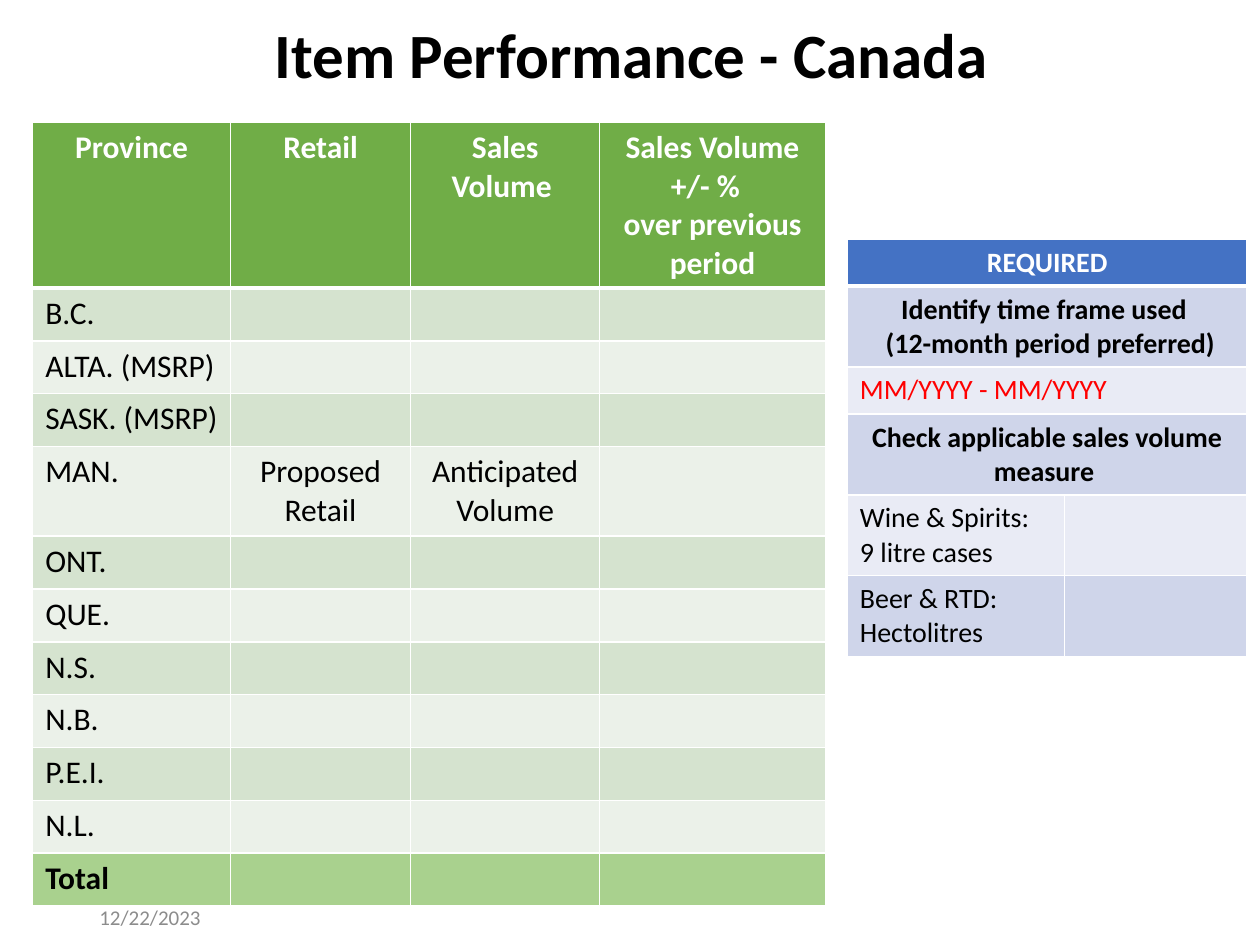
"""Build the Item Performance - Canada slide with its two tables."""
from lxml import etree
from pptx import Presentation
from pptx.dml.color import RGBColor
from pptx.enum.text import MSO_ANCHOR, PP_ALIGN
from pptx.oxml.ns import qn
from pptx.util import Pt

CENTER, LEFT = PP_ALIGN.CENTER, PP_ALIGN.LEFT
MIDDLE = MSO_ANCHOR.MIDDLE
TITLE_ONLY = 5
FONT = "Calibri"
COLORS = {
    "black": "000000", "white": "FFFFFF", "gray": "8C8C8C", "red": "FF0000",
    "green": "70AD47", "green_dark": "D5E3CF", "green_light": "EBF1E9",
    "green_total": "A9D18E",
    "blue": "4472C4", "blue_dark": "CFD5EA", "blue_light": "E9EBF5",
}
PROVINCES = ["B.C.", "ALTA. (MSRP)", "SASK. (MSRP)", "MAN.", "ONT.", "QUE.",
             "N.S.", "N.B.", "P.E.I.", "N.L."]
HEADERS = [["Province"], ["Retail"], ["Sales Volume "],
           ["Sales Volume", "+/- %  ", "over previous period"]]


def write(tf, lines, size, color="black", bold=False, align=LEFT):
    """Write one paragraph per line."""
    for i, line in enumerate(lines):
        p = tf.paragraphs[0] if i == 0 else tf.add_paragraph()
        p.alignment = align
        r = p.add_run()
        r.text = line
        r.font.name = FONT
        r.font.size = Pt(size)
        r.font.bold = bold
        r.font.color.rgb = RGBColor.from_string(COLORS[color])


def place(sp, left, top, width, height):
    """Set position and size in points."""
    sp.left, sp.top, sp.width, sp.height = map(Pt, (left, top, width, height))


def style_cell(cell, fill, bottom=1, top=1):
    """Give a cell white borders and a solid fill."""
    tc_pr = cell._tc.get_or_add_tcPr()
    for side, width in (("L", 1), ("R", 1), ("T", top), ("B", bottom)):
        ln = etree.SubElement(tc_pr, qn(f"a:ln{side}"), w=str(Pt(width)))
        solid = etree.SubElement(ln, qn("a:solidFill"))
        etree.SubElement(solid, qn("a:srgbClr"), val=COLORS["white"])
    cell.fill.solid()
    cell.fill.fore_color.rgb = RGBColor.from_string(COLORS[fill])


def add_table(slide, left, top, widths, heights, fills):
    """Add a table with one fill per row and a thick rule under the header."""
    frame = slide.shapes.add_table(len(heights), len(widths), Pt(left), Pt(top),
                                   Pt(sum(widths)), Pt(sum(heights)))
    table = frame.table
    for col, width in zip(table.columns, widths):
        col.width = Pt(width)
    for i, (row, height, fill) in enumerate(zip(table.rows, heights, fills)):
        row.height = Pt(height)
        for cell in row.cells:
            style_cell(cell, fill, bottom=3 if i == 0 else 1,
                       top=3 if i == 1 else 1)
    return table


def add_title(slide, text):
    """Move and format the title placeholder."""
    sp = slide.shapes.title
    place(sp, 36.7, 9.4, 648, 48)
    tf = sp.text_frame
    tf.vertical_anchor = MIDDLE
    write(tf, [text], 36, bold=True, align=CENTER)
    tf.paragraphs[0].line_spacing = 0.9


def add_date(slide, text):
    """Add the date at the foot of the slide."""
    sp = slide.shapes.add_textbox(Pt(49.7), Pt(518.4), Pt(162), Pt(10.8))
    tf = sp.text_frame
    tf.word_wrap = True
    tf.vertical_anchor = MIDDLE
    write(tf, [text], 12, "gray")


def add_sales_table(slide):
    """Add the table of sales by province."""
    heights = [94.5] + [51.2 if name == "MAN." else 30.2 for name in PROVINCES] + [30.2]
    bands = ["green_dark", "green_light"] * (len(PROVINCES) // 2)
    table = add_table(slide, 18.7, 70.1, [113, 103, 108, 129], heights,
                      ["green"] + bands + ["green_total"])
    for col, lines in enumerate(HEADERS):
        write(table.cell(0, col).text_frame, lines, 18, "white", True, CENTER)
    for row, name in enumerate(PROVINCES, 1):
        write(table.cell(row, 0).text_frame, [name], 18)
    manitoba = PROVINCES.index("MAN.") + 1
    for col, text in enumerate(["Proposed Retail", "Anticipated Volume"], 1):
        write(table.cell(manitoba, col).text_frame, [text], 18, align=CENTER)
    write(table.cell(len(PROVINCES) + 1, 0).text_frame, ["Total "], 18, bold=True)


def add_required_table(slide):
    """Add the table of required details."""
    rows = [
        (["REQUIRED"], "white", True, CENTER),
        (["Identify time frame used ", " (12-month period preferred)"],
         "black", True, CENTER),
        (["MM/YYYY - MM/YYYY"], "red", False, LEFT),
        (["Check applicable sales volume measure "], "black", True, CENTER),
        (["Wine & Spirits: ", "9 litre cases"], "black", False, LEFT),
        (["Beer & RTD: Hectolitres"], "black", False, LEFT),
    ]
    table = add_table(slide, 484.2, 136.8, [124, 104.4],
                      [26.7, 46.2, 27, 46.2, 46.2, 46.2],
                      ["blue"] + ["blue_dark", "blue_light"] * 2 + ["blue_dark"])
    for i, (lines, color, bold, align) in enumerate(rows):
        if i < 4:
            table.cell(i, 0).merge(table.cell(i, 1))
        write(table.cell(i, 0).text_frame, lines, 16, color, bold, align)


def main():
    """Build and save the slide."""
    prs = Presentation()
    prs.slide_width, prs.slide_height = Pt(720), Pt(540)
    slide = prs.slides.add_slide(prs.slide_layouts[TITLE_ONLY])
    add_title(slide, "Item Performance - Canada")
    add_date(slide, "12/22/2023")
    add_sales_table(slide)
    add_required_table(slide)
    prs.save("out.pptx")


if __name__ == "__main__":
    main()
